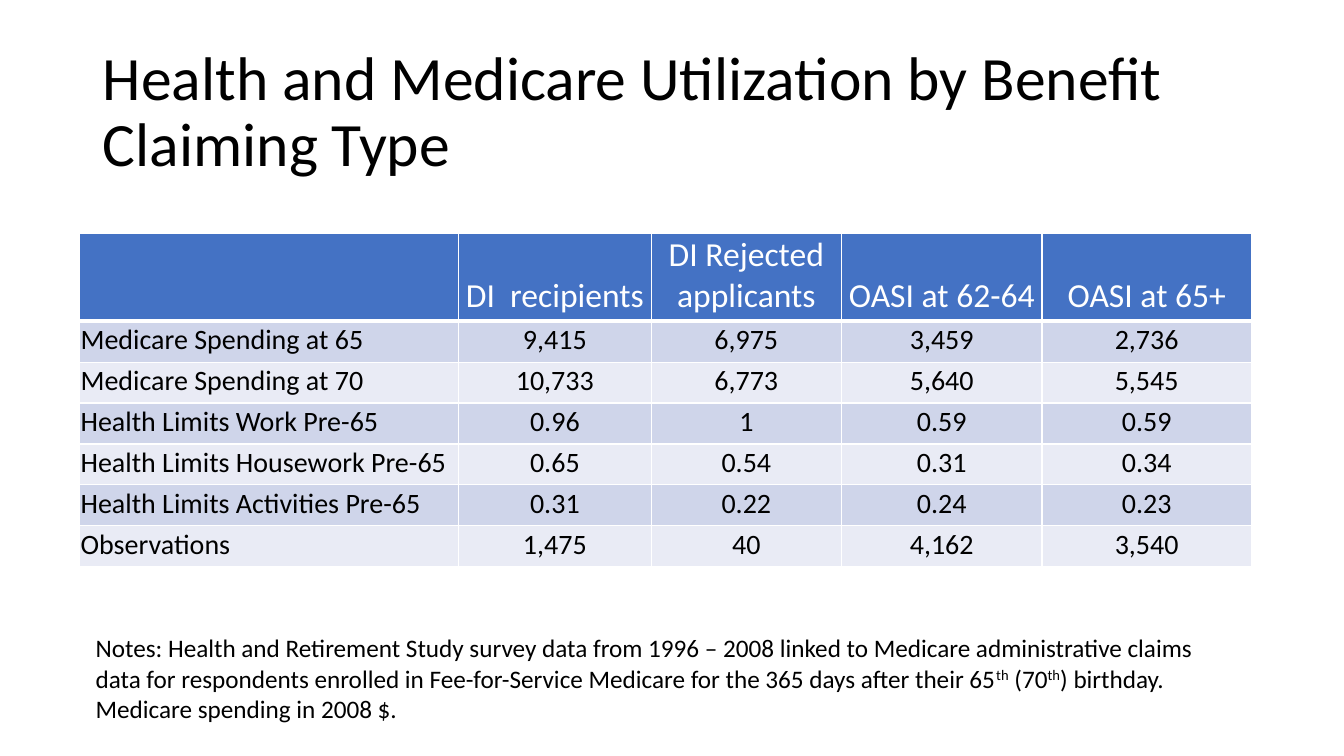
from dataclasses import dataclass

from lxml.etree import SubElement
from pptx import Presentation
from pptx.dml.color import RGBColor
from pptx.enum.text import MSO_ANCHOR, MSO_AUTO_SIZE, PP_ALIGN
from pptx.oxml.ns import qn
from pptx.util import Cm, Pt


@dataclass(frozen=True)
class Theme:
    font: str = "Calibri"
    ink: str = "000000"
    white: str = "FFFFFF"
    head: str = "4472C4"
    bands: tuple = ("CFD5EA", "E9EBF5")
    title_size: int = 44
    head_size: int = 24
    body_size: int = 20
    note_size: int = 18


THEME = Theme()
TITLE = "Health and Medicare Utilization by Benefit Claiming Type"
HEADS = ("", "DI  recipients", "DI Rejected applicants", "OASI at 62-64", "OASI at 65+")
ROWS = (
    ("Medicare Spending at 65", "9,415", "6,975", "3,459", "2,736"),
    ("Medicare Spending at 70", "10,733", "6,773", "5,640", "5,545"),
    ("Health Limits Work Pre-65", "0.96", "1", "0.59", "0.59"),
    ("Health Limits Housework Pre-65", "0.65", "0.54", "0.31", "0.34"),
    ("Health Limits Activities Pre-65", "0.31", "0.22", "0.24", "0.23"),
    ("Observations", "1,475", "40", "4,162", "3,540"),
)
WIDTHS = (9.55, 4.85, 4.8, 5.05, 5.28)
HEAD_HEIGHT, ROW_HEIGHT = 2.18, 1.03
# Every second part is raised.
NOTES = (
    "Notes: Health and Retirement Study survey data from 1996 – 2008 linked to "
    "Medicare administrative claims data for respondents enrolled in "
    "Fee-for-Service Medicare for the 365 days after their 65",
    "th",
    " (70",
    "th",
    ") birthday.  Medicare spending in 2008 $.",
)


def style(para, size, color=THEME.ink):
    for run in para.runs:
        font = run.font
        font.name, font.size, font.bold = THEME.font, Pt(size), False
        font.color.rgb = RGBColor.from_string(color)


def add_title(slide):
    title = slide.shapes.title
    title.left, title.top, title.width, title.height = Cm(2.34), Cm(1.02), Cm(29.21), Cm(3.68)
    frame = title.text_frame
    frame.text = TITLE
    frame.auto_size = MSO_AUTO_SIZE.NONE
    frame.vertical_anchor = MSO_ANCHOR.MIDDLE
    para = frame.paragraphs[0]
    para.alignment, para.line_spacing = PP_ALIGN.LEFT, 0.9
    style(para, THEME.title_size)


def add_edge(cell, side, width):
    props = cell._tc.get_or_add_tcPr()
    line = SubElement(props, qn(f"a:ln{side}"), w=str(Pt(width)))
    fill = SubElement(line, qn("a:solidFill"))
    SubElement(fill, qn("a:srgbClr"), val=THEME.white)


def fill_cell(cell, text, row, col):
    is_head = row == 0
    cell.text = text
    cell.vertical_anchor = MSO_ANCHOR.BOTTOM
    cell.margin_left = cell.margin_right = cell.margin_top = Cm(0.02)
    cell.margin_bottom = Cm(0.12)
    for side in "LRTB":
        thick = (is_head and side == "B") or (row == 1 and side == "T")
        add_edge(cell, side, 3 if thick else 1)
    cell.fill.solid()
    color = THEME.head if is_head else THEME.bands[(row - 1) % 2]
    cell.fill.fore_color.rgb = RGBColor.from_string(color)
    para = cell.text_frame.paragraphs[0]
    para.alignment = PP_ALIGN.CENTER if col else PP_ALIGN.LEFT
    if is_head:
        style(para, THEME.head_size, THEME.white)
    else:
        style(para, THEME.body_size)


def add_grid(slide):
    data = (HEADS, *ROWS)
    high = HEAD_HEIGHT + ROW_HEIGHT * len(ROWS)
    frame = slide.shapes.add_table(
        len(data), len(HEADS), Cm(2.01), Cm(5.89), Cm(sum(WIDTHS)), Cm(high)
    )
    table = frame.table
    for column, width in zip(table.columns, WIDTHS):
        column.width = Cm(width)
    for row, texts in enumerate(data):
        table.rows[row].height = Cm(ROW_HEIGHT if row else HEAD_HEIGHT)
        for col, text in enumerate(texts):
            fill_cell(table.cell(row, col), text, row, col)


def add_notes(slide):
    box = slide.shapes.add_textbox(Cm(2.16), Cm(15.82), Cm(29.36), Cm(3.33))
    frame = box.text_frame
    frame.word_wrap = True
    para = frame.paragraphs[0]
    for index, text in enumerate(NOTES):
        run = para.add_run()
        run.text = text
        if index % 2:
            run._r.get_or_add_rPr().set("baseline", "30000")
    style(para, THEME.note_size)


def main():
    deck = Presentation()
    deck.slide_width, deck.slide_height = Cm(33.87), Cm(19.05)
    slide = deck.slides.add_slide(deck.slide_layouts[5])
    add_title(slide)
    add_grid(slide)
    add_notes(slide)
    deck.save("out.pptx")


if __name__ == "__main__":
    main()
